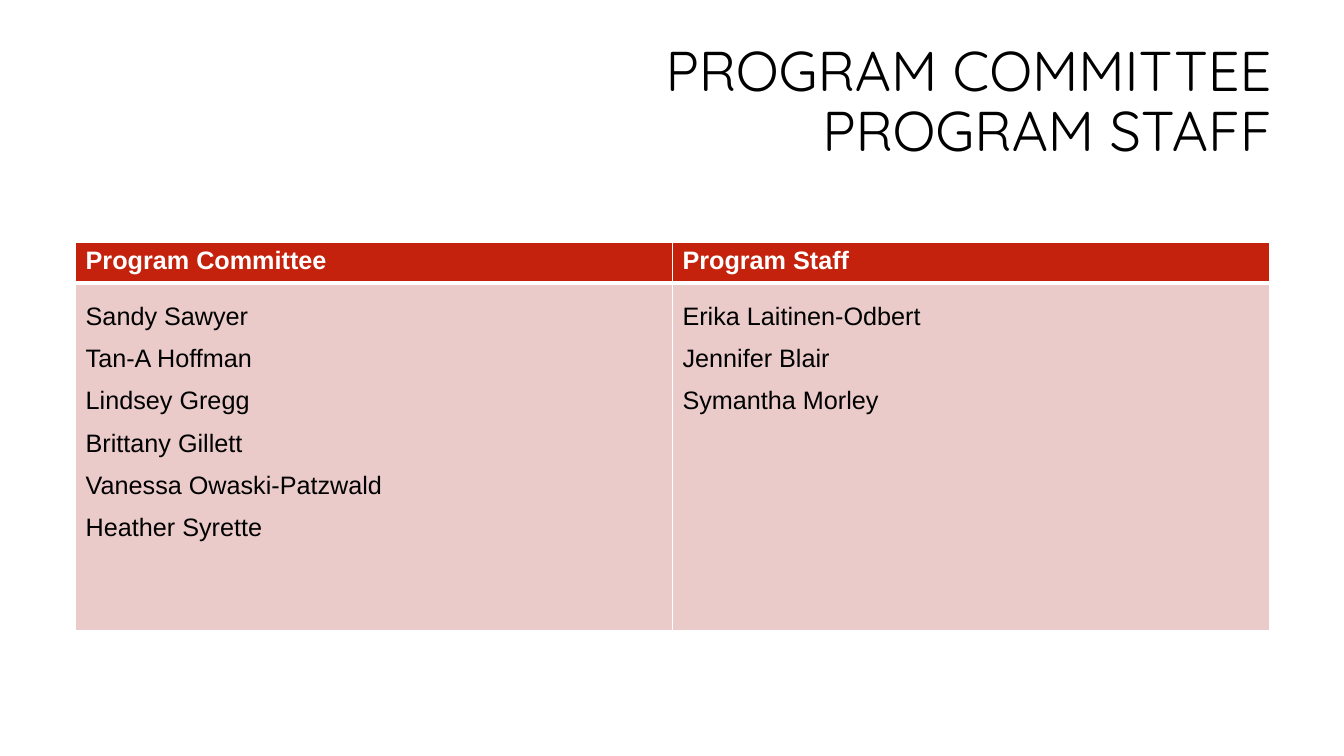
"""Build the program committee and program staff slide."""
import pptx
import pptx.dml.color
import pptx.enum.text
import pptx.oxml
import pptx.oxml.ns
import pptx.util

Inches = pptx.util.Inches
Pt = pptx.util.Pt


def color(hex_code):
    return pptx.dml.color.RGBColor.from_string(hex_code)


def write(frame, lines, font="Arial", size=18, ink="000000", bold=False,
          align=pptx.enum.text.PP_ALIGN.LEFT, spacing=1.0):
    frame.word_wrap = True
    for number, line in enumerate(lines):
        paragraph = frame.add_paragraph() if number else frame.paragraphs[0]
        paragraph.text = line
        paragraph.alignment = align
        paragraph.line_spacing = spacing
        for run in paragraph.runs:
            run.font.name = font
            run.font.size = Pt(size)
            run.font.bold = bold
            run.font.color.rgb = color(ink)


groups = {
    "Program Committee": ["Sandy Sawyer", "Tan-A Hoffman", "Lindsey Gregg",
                          "Brittany Gillett", "Vanessa Owaski-Patzwald",
                          "Heather Syrette"],
    "Program Staff": ["Erika Laitinen-Odbert", "Jennifer Blair",
                      "Symantha Morley"],
}
column_width = Inches(5.92)
row_heights = [Inches(0.41), Inches(3.45)]

presentation = pptx.Presentation()
presentation.slide_width = Inches(13.33)
presentation.slide_height = Inches(7.5)
slide = presentation.slides.add_slide(presentation.slide_layouts[6])

title = slide.shapes.add_textbox(
    Inches(3.29), Inches(0.32), Inches(9.42), Inches(1.41)).text_frame
title.vertical_anchor = pptx.enum.text.MSO_ANCHOR.MIDDLE
write(title, ["PROGRAM COMMITTEE\vPROGRAM STAFF"], font="Quicksand", size=40,
      align=pptx.enum.text.PP_ALIGN.RIGHT, spacing=0.9)

roster = slide.shapes.add_table(
    len(row_heights), len(groups), Inches(0.75), Inches(2.4),
    column_width * len(groups), sum(row_heights)).table
for row, height in zip(roster.rows, row_heights):
    row.height = height

for index, (heading, members) in enumerate(groups.items()):
    roster.columns[index].width = column_width
    header, body = roster.cell(0, index), roster.cell(1, index)
    write(header.text_frame, [heading], ink="FFFFFF", bold=True)
    write(body.text_frame, members, spacing=1.5)
    for cell, fill, thick_side in ((header, "C4220D", "B"), (body, "EACBCA", "T")):
        properties = cell._tc.get_or_add_tcPr()
        for side in "LRTB":
            width = Pt(3 if side == thick_side else 1)
            properties.append(pptx.oxml.parse_xml(
                f'<a:ln{side} {pptx.oxml.ns.nsdecls("a")} w="{width}"><a:solidFill>'
                f'<a:srgbClr val="FFFFFF"/></a:solidFill></a:ln{side}>'))
        cell.fill.solid()
        cell.fill.fore_color.rgb = color(fill)

presentation.save("out.pptx")
